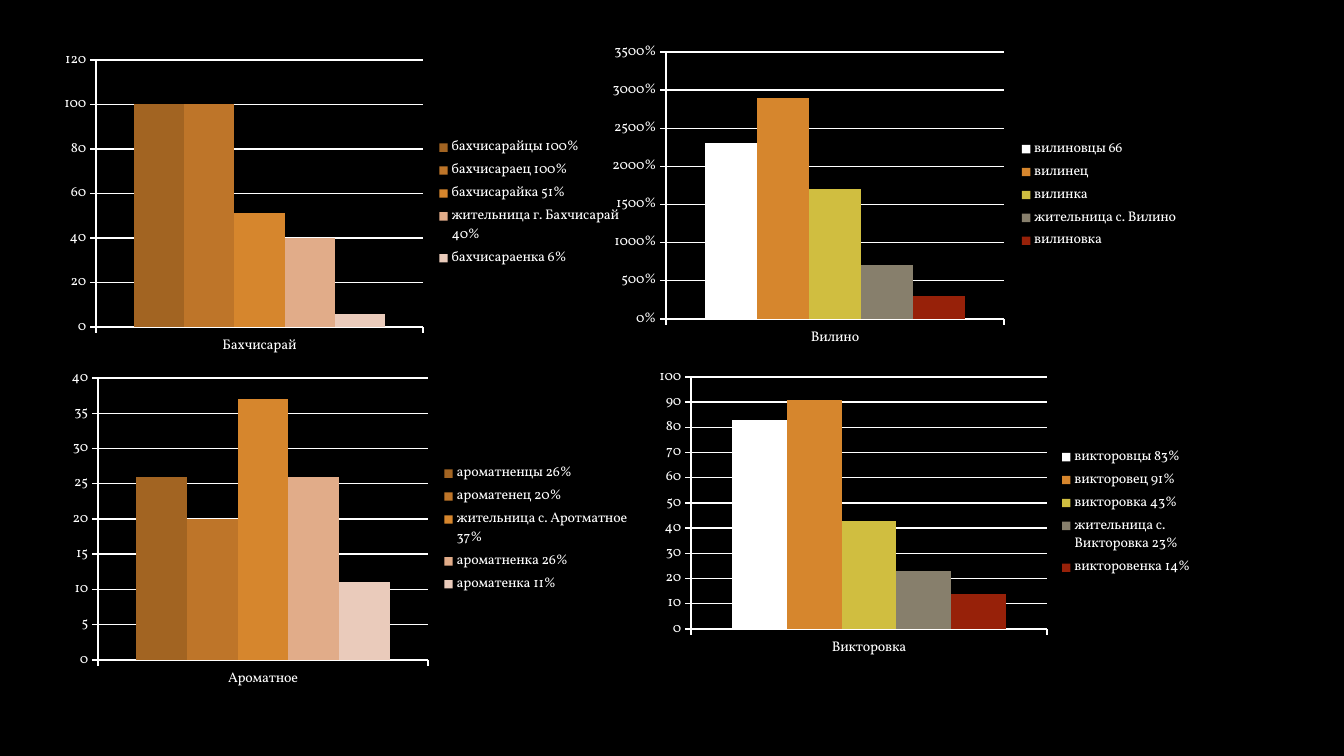
from lxml import etree
from pptx import Presentation
from pptx.chart.data import CategoryChartData
from pptx.dml.color import RGBColor
from pptx.enum import chart as ch
from pptx.oxml import ns
from pptx.util import Pt

PX = 914400 / 100.8
FONT = "Vollkorn"
WHITE = "FFFFFF"
ORANGES = ["A26422", "BE7529", "D6862D", "E1AC89", "EACBBB"]
MIXED = [WHITE, "D6862D", "D0BE40", "877F6C", "972109"]

# town, chart box, plot box, colours, axis maximum, axis step, number format, series
CHARTS = [
    ("Бахчисарай", (52, 44, 580, 318), (96, 60, 327, 267), ORANGES, 120, 20, "General",
     [("бахчисарайцы 100%", 100), ("бахчисараец 100%", 100), ("бахчисарайка 51%", 51),
      ("жительница г. Бахчисарай 40%", 40), ("бахчисараенка 6%", 6)]),
    ("Ароматное", (60, 362, 580, 334), (98, 378, 330, 282), ORANGES, 40, 5, "General",
     [("ароматненцы 26%", 26), ("ароматенец 20%", 20), ("жительница с. Аротматное 37%", 37),
      ("ароматненка 26%", 26), ("ароматенка 11%", 11)]),
    ("Вилино", (601, 36, 588, 318), (666, 52, 338, 267), MIXED, 35, 5, "0%",
     [("вилиновцы 66", 23), ("вилинец", 29), ("вилинка", 17),
      ("жительница с. Вилино", 7), ("вилиновка", 3)]),
    ("Викторовка", (648, 362, 555, 301), (691, 377, 356, 252), MIXED, 100, 10, "General",
     [("викторовцы 83%", 83), ("викторовец 91%", 91), ("викторовка 43%", 43),
      ("жительница с. Викторовка 23%", 23), ("викторовенка 14%", 14)]),
]


def px(n):
    return round(n * PX)


def rgb(value):
    return RGBColor.from_string(value)


def white_line(line):
    line.color.rgb = rgb(WHITE)
    line.width = Pt(1)


def place_plot(chart, box, plot):
    """Fix the inner plot area at the given slide position within the chart box."""
    area = chart._chartSpace.chart.plotArea
    for old in area.findall(ns.qn("c:layout")):
        area.remove(old)
    layout = etree.Element(ns.qn("c:layout"))
    manual = etree.SubElement(layout, ns.qn("c:manualLayout"))
    x, y, w, h = box
    left, top, width, height = plot
    values = [("layoutTarget", "inner"), ("xMode", "edge"), ("yMode", "edge"),
              ("x", (left - x) / w), ("y", (top - y) / h),
              ("w", width / w), ("h", height / h)]
    for name, value in values:
        etree.SubElement(manual, ns.qn(f"c:{name}")).set("val", str(value))
    area.insert(0, layout)


def add_town_chart(s, town, box, plot, colours, top, step, number_format, series):
    data = CategoryChartData()
    data.categories = [town]
    for name, value in series:
        data.add_series(name, [value])
    frame = s.shapes.add_chart(ch.XL_CHART_TYPE.COLUMN_CLUSTERED, *map(px, box), data)
    chart = frame.chart
    chart.has_title = False
    chart.font.name = FONT
    chart.font.size = Pt(10)
    chart.font.color.rgb = rgb(WHITE)

    chart.has_legend = True
    chart.legend.position = ch.XL_LEGEND_POSITION.RIGHT
    chart.legend.include_in_layout = False

    for axis in (chart.category_axis, chart.value_axis):
        axis.major_tick_mark = ch.XL_TICK_MARK.OUTSIDE
        white_line(axis.format.line)
    values = chart.value_axis
    values.minimum_scale, values.maximum_scale, values.major_unit = 0, top, step
    values.has_major_gridlines = True
    white_line(values.major_gridlines.format.line)
    values.tick_labels.number_format = number_format
    values.tick_labels.number_format_is_linked = False

    bars = chart.plots[0]
    bars.gap_width = 150
    bars.vary_by_categories = False
    for bar, colour in zip(bars.series, colours):
        bar.format.fill.solid()
        bar.format.fill.fore_color.rgb = rgb(colour)
        bar.invert_if_negative = False
    place_plot(chart, box, plot)


def main():
    prs = Presentation()
    prs.slide_width, prs.slide_height = px(1344), px(756)
    s = prs.slides.add_slide(prs.slide_layouts[6])
    s.background.fill.solid()
    s.background.fill.fore_color.rgb = rgb("000000")
    for town_chart in CHARTS:
        add_town_chart(s, *town_chart)
    prs.save("out.pptx")


if __name__ == "__main__":
    main()
